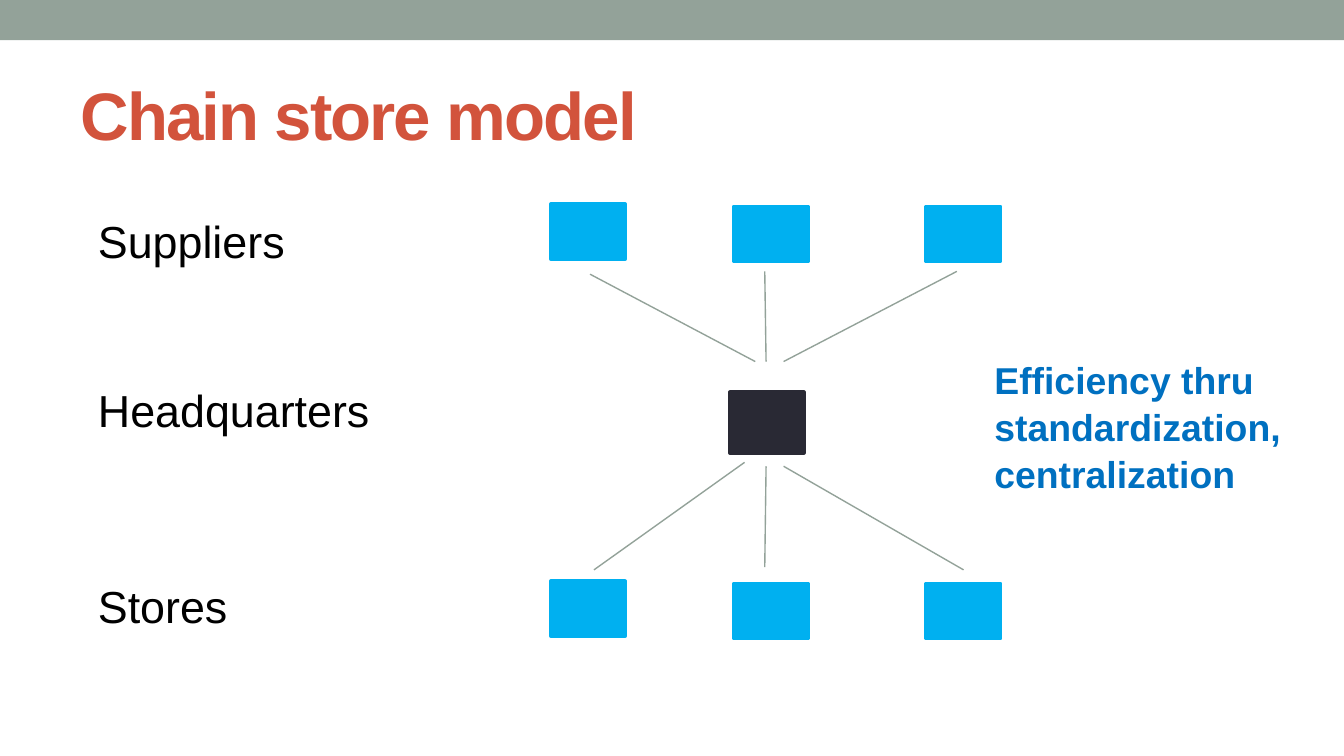
import pptx
import pptx.util
import pptx.dml.color
import pptx.enum.shapes
import pptx.enum.text
from dataclasses import dataclass
from lxml import etree

Pt = pptx.util.Pt
SHAPE = pptx.enum.shapes.MSO_SHAPE
ANCHOR = pptx.enum.text.MSO_ANCHOR


@dataclass(frozen=True)
class Theme:
    font: str = "Arial"
    band: str = "93A299"
    title: str = "D2533C"
    text: str = "000000"
    site: str = "00B0F0"
    hub: str = "292934"
    note: str = "0070C0"
    title_size: float = 36
    label_size: float = 24
    note_size: float = 20
    outline: float = 2.08
    link: float = 0.75


T = Theme()


def rgb(value):
    return pptx.dml.color.RGBColor.from_string(value)


def add_text(s, box, text, size, color, bold=False, anchor=ANCHOR.TOP, spacing=1.05):
    tf = s.shapes.add_textbox(*map(Pt, box)).text_frame
    tf.word_wrap = True
    tf.vertical_anchor = anchor
    tf.text = text
    p = tf.paragraphs[0]
    p.line_spacing = spacing
    r = p.runs[0]
    r.font.name, r.font.size, r.font.bold = T.font, Pt(size), bold
    r.font.color.rgb = rgb(color)
    return r


def add_box(s, box, color, outlined=True):
    sp = s.shapes.add_shape(SHAPE.RECTANGLE, *map(Pt, box))
    sp.shadow.inherit = False
    sp.fill.solid()
    sp.fill.fore_color.rgb = rgb(color)
    if outlined:
        sp.line.color.rgb = rgb(color)
        sp.line.width = Pt(T.outline)
    else:
        sp.line.fill.background()


def add_link(s, x1, y1, x2, y2):
    line = s.shapes.add_connector(
        pptx.enum.shapes.MSO_CONNECTOR.STRAIGHT, Pt(x1), Pt(y1), Pt(x2), Pt(y2))
    line.line.color.rgb = rgb(T.band)
    line.line.width = Pt(T.link)
    etree.SubElement(line._element.spPr, pptx.oxml.ns.qn("a:effectLst"))


def header(s, x, y, w):
    # Top band and title
    add_box(s, (x, y, w, 21.5), T.band, outlined=False)
    r = add_text(s, (x + 36, y + 31.7, w - 72, 58.3), "Chain store model",
                 T.title_size, T.title, True, ANCHOR.MIDDLE, 1)
    r._r.get_or_add_rPr().set("spc", "-100")


def level_labels(s, x, y, w):
    # One label per level of the chain
    for dy, text in ((0, "Suppliers"), (90.8, "Headquarters"), (195.9, "Stores")):
        add_text(s, (x, y + dy, w, 36), text, T.label_size, T.text)


def chain_diagram(s, x, y):
    # Suppliers above and stores below; the first column sits slightly higher
    for row in (0, 202):
        for dx, dy in ((0, 0), (98, 1.2), (201, 1.2)):
            add_box(s, (x + dx, y + row + dy, 39.6, 29.5), T.site)

    # Headquarters
    add_box(s, (x + 95.8, y + 100.8, 39.6, 32.4), T.hub)

    # Links into and out of headquarters
    links = (
        (20.9, 37.5, 109.4, 84.3), (114.5, 36, 115.2, 84.3), (217.4, 36, 124.6, 84.3),
        (23, 195.9, 103.7, 138.3), (115.2, 140.4, 114.5, 194.4), (124.6, 140.4, 221, 195.9),
    )
    for x1, y1, x2, y2 in links:
        add_link(s, x + x1, y + y1, x + x2, y + y2)


def takeaway(s, x, y, w, h):
    # Remark beside the diagram
    add_text(s, (x, y, w, h), "Efficiency thru standardization, centralization",
             T.note_size, T.note, True)


def main():
    prs = pptx.Presentation()
    prs.slide_width, prs.slide_height = Pt(720), Pt(405)
    s = prs.slides.add_slide(prs.slide_layouts[6])
    header(s, 0, 0, 720)
    level_labels(s, 45.4, 109.4, 174)
    chain_diagram(s, 295.2, 109.4)
    takeaway(s, 525.6, 186.5, 185.8, 80)
    prs.save("out.pptx")


if __name__ == "__main__":
    main()
